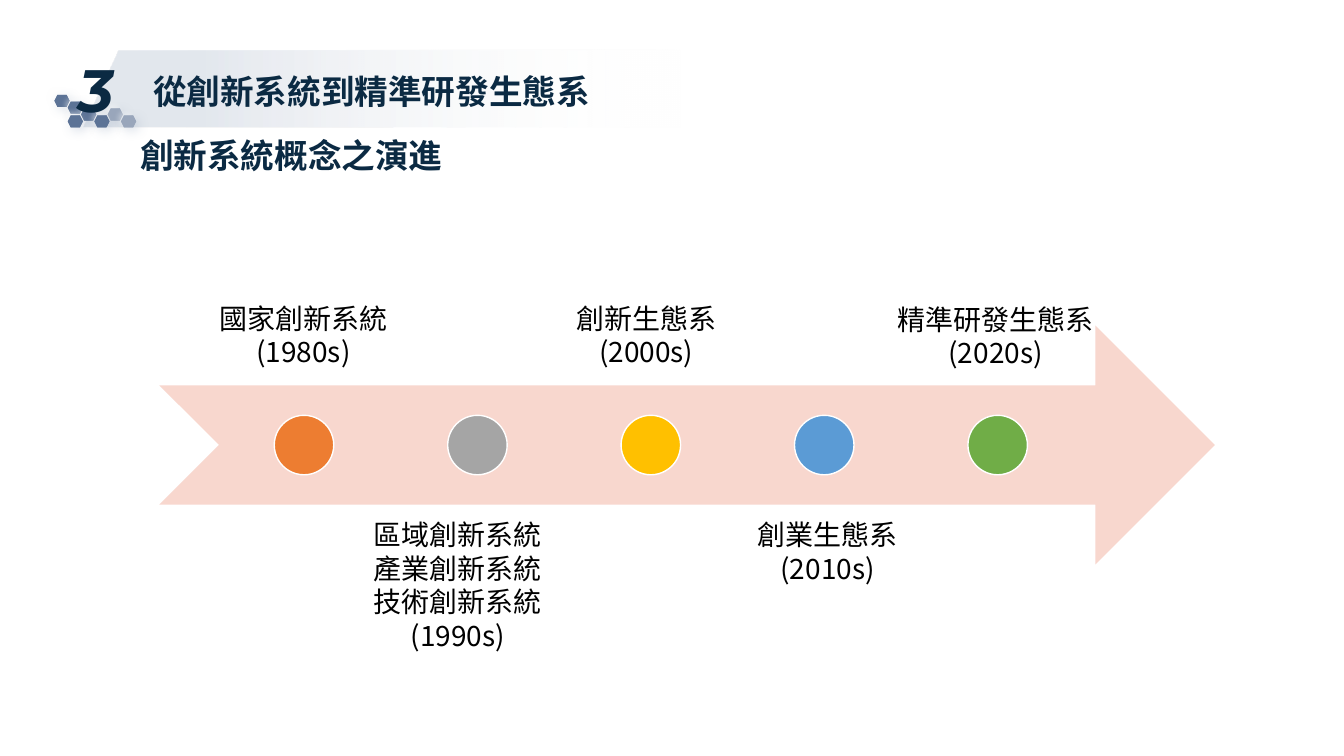
from lxml import etree
from pptx import Presentation
from pptx.dml.color import RGBColor
from pptx.enum.shapes import MSO_SHAPE as Preset
from pptx.enum.text import MSO_ANCHOR as Anchor
from pptx.enum.text import MSO_AUTO_SIZE as AutoSize
from pptx.enum.text import PP_ALIGN as Align
from pptx.oxml.ns import qn
from pptx.util import Inches, Pt

CJK = "Noto Sans CJK SC"
NAVY = "0B2A43"
HEADING = {"name": CJK, "size": Pt(24), "bold": True}
LABEL = {"name": CJK, "size": Pt(20)}
NUMERAL = {"name": "Montserrat", "size": Pt(42.7), "bold": True, "italic": True}

# Column and row on the honeycomb grid, and colour
HONEYCOMB = [
    (0, 0, "5C7396"), (1, 1, "5C7396"), (2, 2, "5C7396"), (4, 2, "99A6BB"),
    (5, 3, "99A6BB"), (1, 3, "5C7396"), (3, 3, "5C7396"),
]
# Shadow colour and direction in degrees, blur in points
GLOWS = [("A2B1C6", 45, 8), ("FFFFFF", 225, 4)]

# Dot colour, label lines, label box, label anchor
STAGES = [
    ("ED7D31", ["國家創新系統", "(1980s)"], (1.99, 2.69, 2.04, 1.13), Anchor.BOTTOM),
    ("A5A5A5", ["區域創新系統", "產業創新系統", "技術創新系統", "(1990s)"],
     (3.53, 5.01, 2.02, 1.88), Anchor.TOP),
    ("FFC000", ["創新生態系", "(2000s)"], (5.55, 2.48, 1.72, 1.34), Anchor.BOTTOM),
    ("5B9BD5", ["創業生態系", "(2010s)"], (7.33, 5.01, 1.76, 1.13), Anchor.TOP),
    ("70AD47", ["精準研發生態系", "(2020s)"], (8.69, 2.19, 2.37, 1.64), Anchor.BOTTOM),
]


def rgb(value):
    return RGBColor.from_string(value)


def add_alpha(colour, percent):
    etree.SubElement(colour, qn("a:alpha"), val=str(percent * 1000))


def add_preset(slide, preset, box, fill, outline=None):
    shape = slide.shapes.add_shape(preset, *map(Inches, box))
    shape.shadow.inherit = False
    shape.fill.solid()
    shape.fill.fore_color.rgb = rgb(fill)
    if outline:
        shape.line.color.rgb = rgb(outline)
        shape.line.width = Pt(1)
    else:
        shape.line.fill.background()
    return shape


def add_text(slide, box, lines, style, colour, frame_format=None, paragraph_format=None):
    frame = slide.shapes.add_textbox(*map(Inches, box)).text_frame
    frame.word_wrap = True
    for key, value in (frame_format or {}).items():
        setattr(frame, key, value)
    for index, line in enumerate(lines):
        paragraph = frame.paragraphs[0] if index == 0 else frame.add_paragraph()
        for key, value in (paragraph_format or {}).items():
            setattr(paragraph, key, value)
        run = paragraph.add_run()
        run.text = line
        for key, value in style.items():
            setattr(run.font, key, value)
        run.font.color.rgb = rgb(colour)
        # East Asian glyphs take their own typeface
        etree.SubElement(run.font._element, qn("a:ea"), typeface=style["name"])


def add_title_band(slide):
    builder = slide.shapes.build_freeform(Inches(0.83), Inches(1.25))
    corners = [(1.18, 0.5), (10.42, 0.49), (10.44, 1.26)]
    builder.add_line_segments([(Inches(x), Inches(y)) for x, y in corners], close=True)
    band = builder.convert_to_shape()
    band.shadow.inherit = False
    band.line.fill.background()
    band.fill.gradient()
    band.fill.gradient_angle = 180
    fades = [(0.38, "FFFFFF", 0), (0.88, "A2B1C6", 30)]
    for stop, (position, colour, opacity) in zip(band.fill.gradient_stops, fades):
        stop.position = position
        stop.color.rgb = rgb(colour)
    for colour, fade in zip(band._element.spPr.iter(qn("a:srgbClr")), fades):
        add_alpha(colour, fade[2])


def add_honeycomb(slide):
    for column, row, fill in HONEYCOMB:
        box = (0.54 + 0.132 * column, 0.94 + 0.068 * row, 0.15, 0.12)
        for glow, direction, blur in GLOWS:
            cell = add_preset(slide, Preset.HEXAGON, box, fill)
            effects = cell._element.spPr.find(qn("a:effectLst"))
            shadow = etree.SubElement(
                effects, qn("a:outerShdw"), blurRad=str(Pt(blur)), dist=str(Pt(3)),
                dir=str(direction * 60000), algn="ctr", rotWithShape="0")
            add_alpha(etree.SubElement(shadow, qn("a:srgbClr"), val=glow), 40)


def add_stage(slide, index, dot, lines, box, anchor):
    margins = {f"margin_{side}": Inches(0.16) for side in ("left", "right", "top", "bottom")}
    add_text(slide, box, lines, LABEL, "000000",
             {"vertical_anchor": anchor, **margins},
             {"alignment": Align.CENTER, "line_spacing": 0.9, "space_after": Pt(2.5)})
    add_preset(slide, Preset.OVAL, (2.72 + 1.72 * index, 4.12, 0.59, 0.59), dot, "FFFFFF")


def main():
    prs = Presentation()
    prs.slide_width, prs.slide_height = Inches(13.33), Inches(7.5)
    slide = prs.slides.add_slide(prs.slide_layouts[6])

    # Section heading
    add_title_band(slide)
    add_honeycomb(slide)
    add_text(slide, (0.48, 0.46, 0.94, 0.84), ["3"], NUMERAL, NAVY,
             {"vertical_anchor": Anchor.MIDDLE, "margin_left": 0, "margin_right": 0,
              "margin_top": Inches(0.07), "margin_bottom": Inches(0.07)},
             {"alignment": Align.CENTER})
    add_text(slide, (1.42, 0.48, 6.06, 0.64), ["從創新系統到精準研發生態系"], HEADING, NAVY,
             {"vertical_anchor": Anchor.MIDDLE, "auto_size": AutoSize.SHAPE_TO_FIT_TEXT},
             {"line_spacing": 1.5})
    add_text(slide, (1.29, 1.29, 4.41, 0.5), ["創新系統概念之演進"], HEADING, NAVY,
             {"auto_size": AutoSize.SHAPE_TO_FIT_TEXT})

    # Timeline
    add_preset(slide, Preset.NOTCHED_RIGHT_ARROW, (1.58, 3.23, 10.47, 2.37), "F8D7CE")
    for index, stage in enumerate(STAGES):
        add_stage(slide, index, *stage)

    prs.save("out.pptx")


if __name__ == "__main__":
    main()
